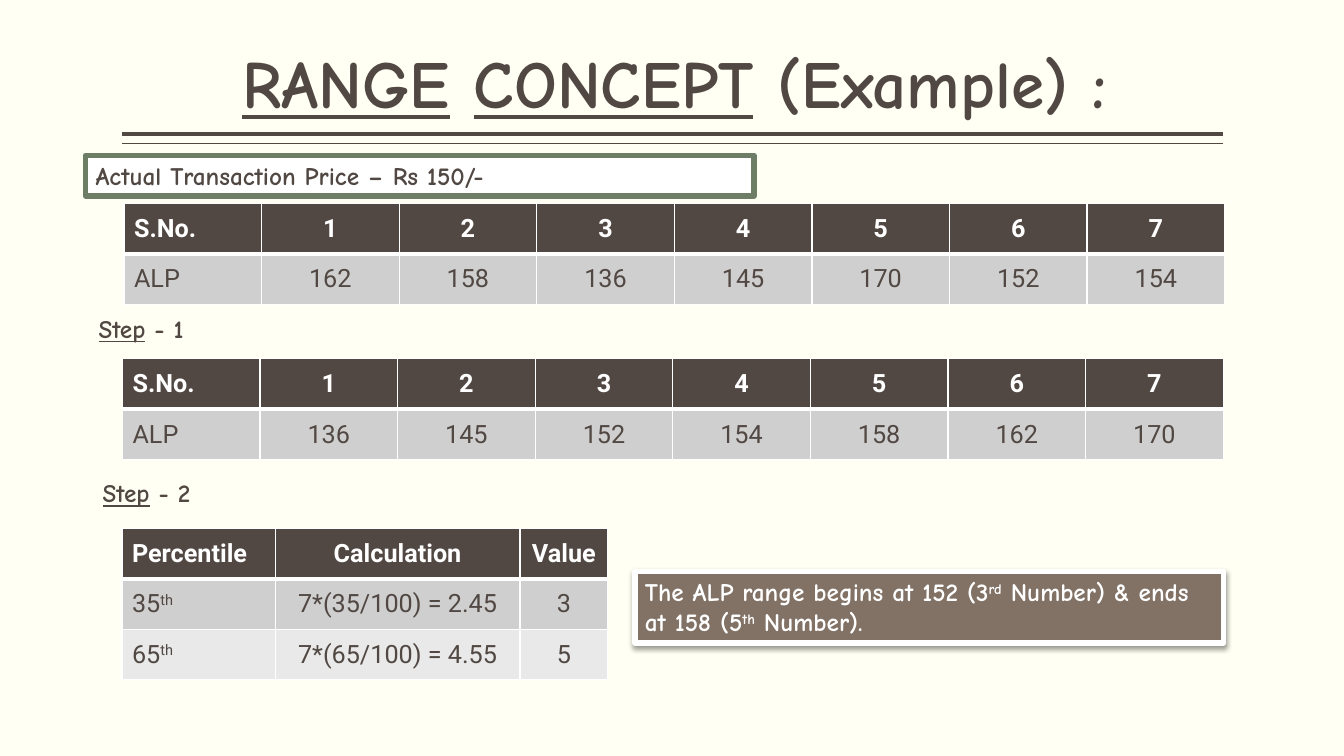
"""Build the slide that works through the range concept with percentiles."""
from dataclasses import dataclass

from lxml.etree import SubElement
from pptx import Presentation
from pptx.dml.color import RGBColor
from pptx.enum.shapes import MSO_CONNECTOR as Connector, MSO_SHAPE as Preset
from pptx.enum.text import MSO_ANCHOR as Anchor, MSO_AUTO_SIZE as AutoSize, PP_ALIGN as Align
from pptx.oxml.ns import qn
from pptx.util import Inches, Pt

COLUMNS, ROWS = 160, 90
UNIT = Inches(7.5) / ROWS
HAND, SANS = "Comic Neue", "Roboto"
DARK, WHITE, CREAM = "514843", "FFFFFF", "FFFFF3"
GREEN, BROWN = "6D7D66", "827266"
BANDS = (DARK, "D0CFCF", "E9E9E9")
TABLE_ROW = 6
SERIAL = ("S.No.", *map(str, range(1, 8)))


@dataclass(frozen=True)
class Box:
    """A place on the grid, in columns and rows."""
    left: float
    top: float
    width: float
    height: float

    def place(self) -> tuple[int, ...]:
        """Return the place in EMU."""
        return tuple(map(grid, (self.left, self.top, self.width, self.height)))


@dataclass(frozen=True)
class Rule:
    """A horizontal line under the title."""
    row: float
    weight: float


@dataclass(frozen=True)
class Grid:
    """A table with its column widths and its rows of text."""
    left: float
    top: float
    widths: tuple[float, ...]
    rows: tuple[tuple[str, ...], ...]


@dataclass(frozen=True)
class Panel:
    """A filled rectangle with an outline and text."""
    box: Box
    text: str
    fill: str
    outline: str
    weight: float
    ink: str
    shadowed: bool = False


@dataclass(frozen=True)
class Label:
    """A short step heading."""
    box: Box
    text: str


TITLE = Box(14.76, 0.84, 131.04, 14.4)
TITLE_TEXT = "_RANGE| |_CONCEPT| (Example) :"
RULES = (Rule(15.96, 3), Rule(17.1, 1))
EIGHT_EQUAL = (16.38,) * 8
TABLES = (
    Grid(14.76, 24.24, EIGHT_EQUAL,
         (SERIAL, ("ALP", "162", "158", "136", "145", "170", "152", "154"))),
    Grid(14.58, 42.72, EIGHT_EQUAL,
         (SERIAL, ("ALP", "136", "145", "152", "154", "158", "162", "170"))),
    Grid(14.52, 62.94, (18.24, 29.16, 10.44),
         (("Percentile", "Calculation", "Value"),
          ("35|^th", "7*(35/100) = 2.45", "3"),
          ("65|^th", "7*(65/100) = 4.55", "5"))),
)
LABELS = (
    Label(Box(10.56, 36.72, 22.08, 4.85), "_Step| - 1"),
    Label(Box(11.04, 56.28, 22.08, 4.85), "_Step| - 2"),
)
PANELS = (
    Panel(Box(75.6, 68.04, 70.08, 8.52),
          "The ALP range begins at 152 (3|^rd| Number) & ends at 158 (5|^th| Number).",
          BROWN, WHITE, 3.82, WHITE, True),
    Panel(Box(10.2, 18.48, 79.56, 4.85), "Actual Transaction Price – Rs 150/-",
          WHITE, GREEN, 3.78, DARK),
)


def grid(units: float) -> int:
    """Turn grid units into EMU."""
    return round(units * UNIT)


def color(code: str) -> RGBColor:
    """Turn a hex string into a colour."""
    return RGBColor.from_string(code)


def write(paragraph, text: str, font: str, size: float, ink: str, bold: bool = True) -> None:
    """Add runs split at |, where _ leads underlined and ^ raised ones."""
    for piece in text.split("|"):
        run = paragraph.add_run()
        run.text = piece.lstrip("_^")
        run.font.name, run.font.size, run.font.bold = font, Pt(size), bold
        run.font.color.rgb = color(ink)
        run.font.underline = piece.startswith("_")
        if piece.startswith("^"):
            run._r.get_or_add_rPr().set("baseline", "30000")


def add_title(slide) -> None:
    """Fill and move the title placeholder."""
    shape = slide.shapes.title
    shape.left, shape.top, shape.width, shape.height = TITLE.place()
    frame = shape.text_frame
    frame.auto_size, frame.word_wrap = AutoSize.NONE, True
    frame.vertical_anchor = Anchor.BOTTOM
    frame.margin_left = frame.margin_right = 0
    paragraph = frame.paragraphs[0]
    paragraph.alignment, paragraph.line_spacing = Align.CENTER, 0.9
    write(paragraph, TITLE_TEXT, HAND, 48, DARK)


def add_rule(slide, rule: Rule) -> None:
    """Draw one line under the title."""
    line = slide.shapes.add_connector(
        Connector.STRAIGHT, *map(grid, (145.56, rule.row, 14.52, rule.row)))
    line.line.color.rgb, line.line.width = color(DARK), Pt(rule.weight)
    SubElement(line._element.spPr, qn("a:effectLst"))


def add_borders(cell, bottom: float) -> None:
    """Give a cell white borders, with its own weight at the bottom."""
    properties = cell._tc.get_or_add_tcPr()
    for side, weight in (("L", 1), ("R", 1), ("T", 1), ("B", bottom)):
        line = SubElement(properties, qn(f"a:ln{side}"), w=str(Pt(weight)))
        fill = SubElement(line, qn("a:solidFill"))
        SubElement(fill, qn("a:srgbClr"), val=WHITE)


def add_grid(slide, table_data: Grid) -> None:
    """Draw a table with a dark header row."""
    box = Box(table_data.left, table_data.top, sum(table_data.widths),
              TABLE_ROW * len(table_data.rows))
    table = slide.shapes.add_table(
        len(table_data.rows), len(table_data.widths), *box.place()).table
    for column, width in zip(table.columns, table_data.widths):
        column.width = grid(width)
    for row, texts in enumerate(table_data.rows):
        header = row == 0
        for column, text in enumerate(texts):
            cell = table.cell(row, column)
            add_borders(cell, 3 if header else 1)
            cell.fill.solid()
            cell.fill.fore_color.rgb = color(BANDS[row])
            cell.vertical_anchor = Anchor.MIDDLE
            paragraph = cell.text_frame.paragraphs[0]
            paragraph.alignment = Align.CENTER if column else Align.LEFT
            write(paragraph, text, SANS, 18, WHITE if header else DARK, header)


def fill_text(shape, text: str, ink: str) -> None:
    """Write wrapped text from the top left of a shape."""
    frame = shape.text_frame
    frame.word_wrap, frame.auto_size = True, AutoSize.SHAPE_TO_FIT_TEXT
    frame.vertical_anchor = Anchor.TOP
    frame.paragraphs[0].alignment = Align.LEFT
    write(frame.paragraphs[0], text, HAND, 18, ink)


def add_shadow(shape) -> None:
    """Put a soft shadow below a shape."""
    effects = shape._element.spPr.find(qn("a:effectLst"))
    shadow = SubElement(effects, qn("a:outerShdw"), blurRad=str(Pt(3.5)),
                        dist=str(Pt(2)), dir="5400000", rotWithShape="0")
    shade = SubElement(shadow, qn("a:srgbClr"), val="000000")
    SubElement(shade, qn("a:alpha"), val="38000")


def add_panel(slide, panel: Panel) -> None:
    """Draw an outlined panel."""
    shape = slide.shapes.add_shape(Preset.RECTANGLE, *panel.box.place())
    shape.fill.solid()
    shape.fill.fore_color.rgb = color(panel.fill)
    shape.line.color.rgb, shape.line.width = color(panel.outline), Pt(panel.weight)
    shape.shadow.inherit = False
    if panel.shadowed:
        add_shadow(shape)
    fill_text(shape, panel.text, panel.ink)


def main() -> None:
    """Build and save the slide."""
    presentation = Presentation()
    presentation.slide_width, presentation.slide_height = grid(COLUMNS), grid(ROWS)
    slide = presentation.slides.add_slide(presentation.slide_layouts[5])
    slide.background.fill.solid()
    slide.background.fill.fore_color.rgb = color(CREAM)
    for rule in RULES:
        add_rule(slide, rule)
    add_title(slide)
    for table_data in TABLES:
        add_grid(slide, table_data)
    for label in LABELS:
        fill_text(slide.shapes.add_textbox(*label.box.place()), label.text, DARK)
    for panel in PANELS:
        add_panel(slide, panel)
    presentation.save("out.pptx")


if __name__ == "__main__":
    main()
